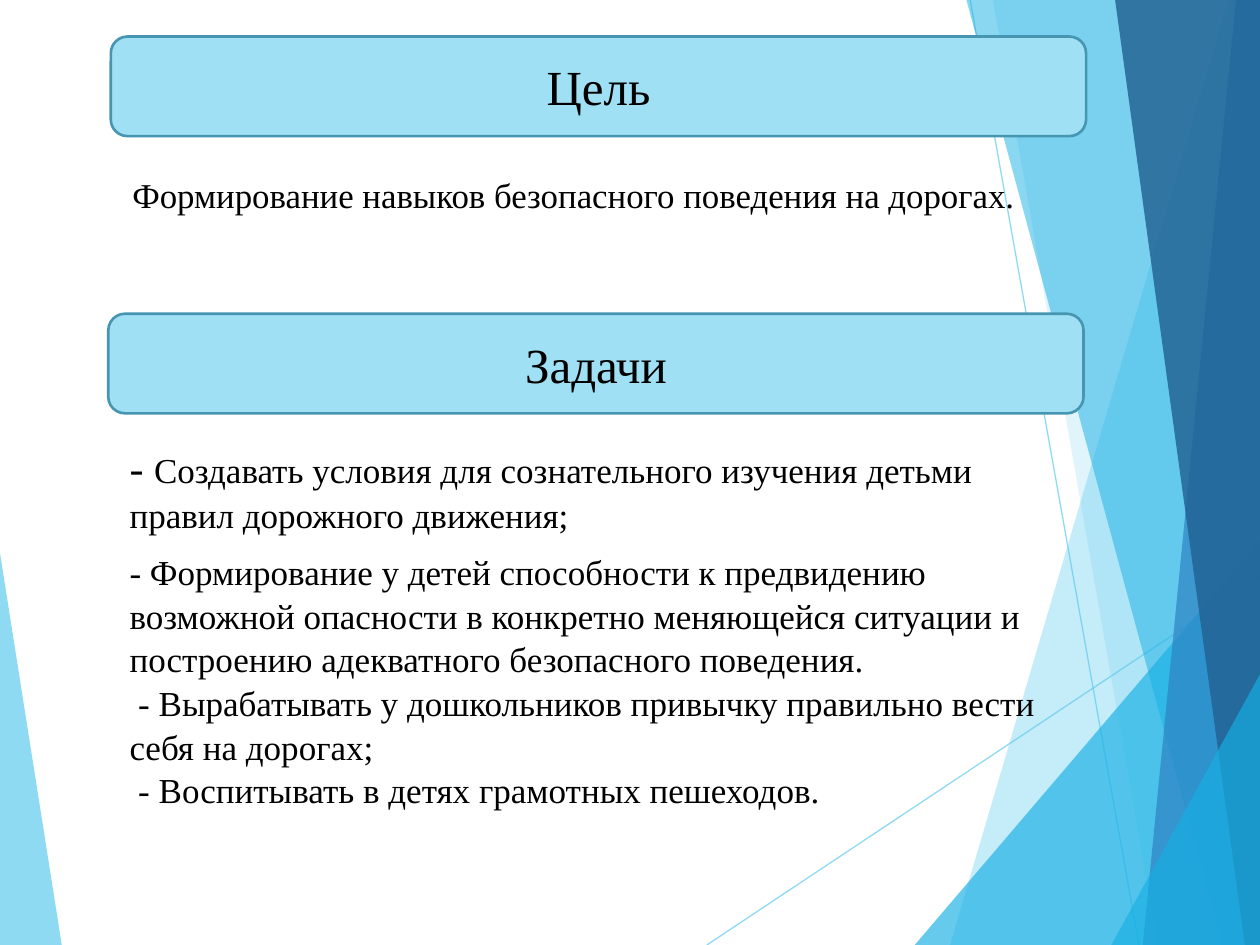
from lxml import etree
from pptx import Presentation, util as u
from pptx.dml.color import RGBColor
from pptx.enum import shapes as s, text as t
from pptx.oxml import ns

COLUMNS, ROWS = 100, 75
CELL = u.Inches(0.1)
SKY, CYAN, BLUE, NAVY = "5FCBEF", "17B0E4", "2E83C3", "226292"
FACE = "Times New Roman"

RAYS = [((56.1, ROWS), (COLUMNS, 45.8)), ((77, 0), (90.4, ROWS))]
FACETS = [
    (SKY, 70, [(0, 43.9), (4.9, ROWS), (0, ROWS)]),
    (SKY, 36, [(97.5, 0), (75.4, ROWS), (COLUMNS, ROWS), (COLUMNS, 0)]),
    (SKY, 20, [(78.8, 0), (91.9, ROWS), (COLUMNS, ROWS), (COLUMNS, 0)]),
    (CYAN, 66, [(72.6, ROWS), (COLUMNS, 42.9), (COLUMNS, ROWS)]),
    (CYAN, 50, [(76.7, 0), (97, ROWS), (COLUMNS, ROWS), (COLUMNS, 0)]),
    (BLUE, 70, [(98.1, 0), (90.7, ROWS), (COLUMNS, ROWS), (COLUMNS, 0)]),
    (NAVY, 82, [(88.5, 0), (98.8, ROWS), (COLUMNS, ROWS), (COLUMNS, 0)]),
    (CYAN, 66, [(88.2, ROWS), (COLUMNS, 53.5), (COLUMNS, ROWS)]),
]
BANNERS = [("Задачи", 8.6, 24.9), ("Цель", 8.8, 2.9)]
GOAL = "Формирование навыков безопасного поведения на дорогах."
TASKS = [
    [[("- ", 24), ("Создавать условия для сознательного изучения детьми "
                   "правил дорожного движения;", 20)]],
    [[("- Формирование у детей способности к предвидению возможной опасности "
       "в конкретно меняющейся ситуации и построению адекватного безопасного "
       "поведения.", 20)],
     [(" - Вырабатывать у дошкольников привычку правильно вести себя "
       "на дорогах;", 20)],
     [(" - Воспитывать в детях грамотных пешеходов.", 20)]],
]


def cells(*counts):
    return [round(count * CELL) for count in counts]


def color(code):
    return RGBColor.from_string(code)


def apply(target, **values):
    for name, value in values.items():
        setattr(target, name, value)


def fade(color_format, code, percent):
    color_format.rgb = color(code)
    mark = color_format._xFill.find(ns.qn("a:srgbClr"))
    etree.SubElement(mark, ns.qn("a:alpha"), val=str(percent * 1000))


def add_ray(slide, start, end):
    ray = slide.shapes.add_connector(
        s.MSO_CONNECTOR.STRAIGHT, *cells(*start, *end))
    ray.line.width = u.Pt(0.75)
    ray.line.fill.solid()
    fade(ray.line.fill.fore_color, SKY, 70)
    etree.SubElement(ray._element.spPr, ns.qn("a:effectLst"))


def add_facet(slide, code, percent, corners):
    outline = slide.shapes.build_freeform(*cells(*corners[0]))
    outline.add_line_segments([cells(*corner) for corner in corners[1:]])
    facet = outline.convert_to_shape()
    facet.shadow.inherit = False
    facet.fill.solid()
    fade(facet.fill.fore_color, code, percent)
    facet.line.fill.background()


def write(paragraph, words, size):
    run = paragraph.add_run()
    run.text = words
    apply(run.font, name=FACE, size=u.Pt(size))
    run.font.color.rgb = color("000000")


def add_banner(slide, heading, left, top):
    banner = slide.shapes.add_shape(
        s.MSO_SHAPE.ROUNDED_RECTANGLE, *cells(left, top, 77.4, 7.9))
    banner.shadow.inherit = False
    banner.fill.solid()
    banner.fill.fore_color.rgb = color("9FE0F5")
    banner.line.color.rgb = color("4696B1")
    banner.line.width = u.Pt(1.5)
    banner.text_frame.vertical_anchor = t.MSO_ANCHOR.MIDDLE
    caption = banner.text_frame.paragraphs[0]
    caption.alignment = t.PP_ALIGN.CENTER
    write(caption, heading, 28)


def place_goal(slide, goal):
    left, top, width, height = cells(8.8, 9.4, 77.4, 16.5)
    apply(goal, left=left, top=top, width=width, height=height)
    slide.shapes._spTree.append(goal._element)
    inset_left, inset_top = cells(1.7, 4.4)
    apply(goal.text_frame, margin_left=inset_left, margin_top=inset_top,
          vertical_anchor=t.MSO_ANCHOR.TOP, auto_size=t.MSO_AUTO_SIZE.NONE,
          word_wrap=True)
    sentence = goal.text_frame.paragraphs[0]
    layout = sentence._p.get_or_add_pPr()
    apply_indent = {"marL": "0", "indent": "0"}
    for name, value in apply_indent.items():
        layout.set(name, value)
    etree.SubElement(layout, ns.qn("a:buNone"))
    sentence.space_before = u.Pt(0)
    write(sentence, GOAL, 19.9)


def add_tasks(slide):
    tasks = slide.shapes.add_textbox(*cells(8.8, 34.4, 77.4, 31.5)).text_frame
    tasks.word_wrap = True
    for number, lines in enumerate(TASKS):
        task = tasks.add_paragraph() if number else tasks.paragraphs[0]
        task._p.get_or_add_pPr().set("marL", str(cells(0.5)[0]))
        apply(task, line_spacing=1.04, space_before=u.Pt(7.5 if number else 0))
        for row, pieces in enumerate(lines):
            if row:
                task.add_line_break()
            for words, size in pieces:
                write(task, words, size)


def main():
    deck = Presentation()
    deck.slide_width, deck.slide_height = cells(COLUMNS, ROWS)
    slide = deck.slides.add_slide(deck.slide_layouts[1])
    title, goal = slide.placeholders
    slide.shapes._spTree.remove(title._element)
    add_facet(slide, *FACETS[0])
    for start, end in RAYS:
        add_ray(slide, start, end)
    for facet in FACETS[1:]:
        add_facet(slide, *facet)
    add_tasks(slide)
    for banner in BANNERS:
        add_banner(slide, *banner)
    place_goal(slide, goal)
    deck.save("out.pptx")


if __name__ == "__main__":
    main()
